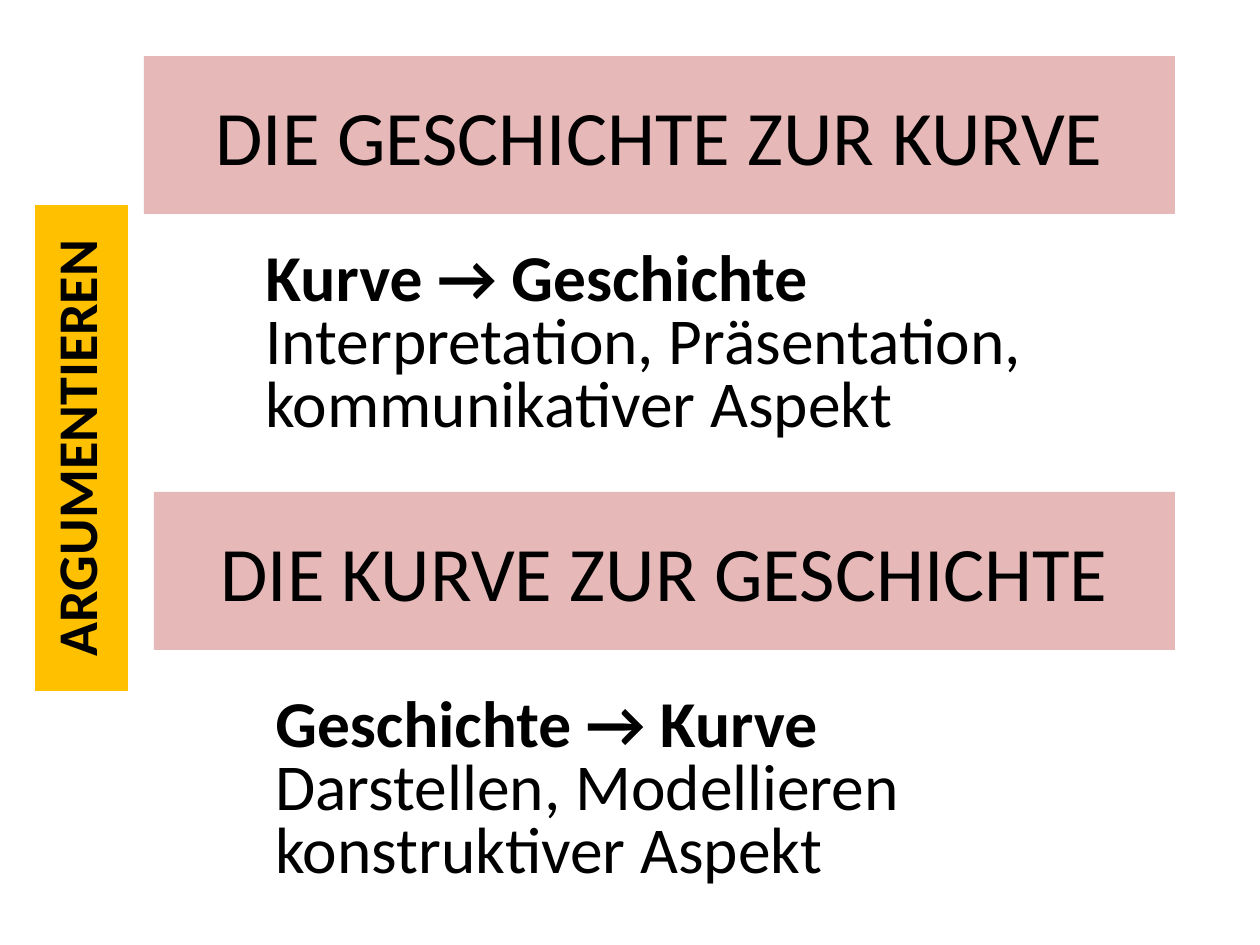
from dataclasses import dataclass

from pptx import Presentation
from pptx.dml.color import RGBColor
from pptx.enum.shapes import MSO_SHAPE
from pptx.enum.text import MSO_ANCHOR, PP_ALIGN
from pptx.oxml.ns import qn
from pptx.slide import Slide
from pptx.text.text import TextFrame
from pptx.util import Emu, Pt

PIXELS_PER_INCH = 126
BLACK = RGBColor(0x00, 0x00, 0x00)
ROSE = RGBColor(0xE6, 0xB9, 0xB8)
AMBER = RGBColor(0xFF, 0xC0, 0x00)
FONT = "Calibri"


@dataclass(frozen=True)
class Area:
    left: int
    top: int
    width: int
    height: int

    def to_emu(self) -> list[Emu]:
        return [px(value) for value in (self.left, self.top, self.width, self.height)]


@dataclass(frozen=True)
class Section:
    title: str
    title_area: Area
    body: str
    body_area: Area


SECTIONS = [
    Section(
        "DIE GESCHICHTE ZUR KURVE",
        Area(144, 56, 1031, 158),
        "Kurve → Geschichte\vInterpretation, Präsentation, kommunikativer Aspekt",
        Area(253, 244, 784, 203),
    ),
    Section(
        "DIE KURVE ZUR GESCHICHTE",
        Area(154, 492, 1021, 158),
        "Geschichte → Kurve\vDarstellen, Modellieren\nkonstruktiver Aspekt",
        Area(263, 690, 784, 203),
    ),
]


def px(value: int) -> Emu:
    return Emu(round(value * 914400 / PIXELS_PER_INCH))


def format_text(frame: TextFrame, size: float, bold: bool = False) -> None:
    for paragraph in frame.paragraphs:
        for span in paragraph.runs:
            span.font.name = FONT
            span.font.size = Pt(size)
            span.font.bold = bold
            span.font.color.rgb = BLACK


def add_banner(page: Slide, text: str, area: Area, fill: RGBColor, size: int,
               bold: bool = False) -> TextFrame:
    banner = page.shapes.add_shape(MSO_SHAPE.RECTANGLE, *area.to_emu())
    banner.shadow.inherit = False
    banner.fill.solid()
    banner.fill.fore_color.rgb = fill
    banner.line.fill.background()
    frame = banner.text_frame
    frame.text = text
    frame.vertical_anchor = MSO_ANCHOR.MIDDLE
    frame.paragraphs[0].alignment = PP_ALIGN.CENTER
    format_text(frame, size, bold)
    return frame


def add_body(page: Slide, text: str, area: Area) -> None:
    frame = page.shapes.add_textbox(*area.to_emu()).text_frame
    frame.word_wrap = True
    frame.vertical_anchor = MSO_ANCHOR.MIDDLE
    frame.text = text
    format_text(frame, 37.4)
    for paragraph in frame.paragraphs:
        paragraph.line_spacing = 0.8
    frame.paragraphs[0].runs[0].font.bold = True


def add_side_label(page: Slide, text: str, area: Area) -> None:
    frame = add_banner(page, text, area, AMBER, 32, bold=True)
    frame.vertical_anchor = MSO_ANCHOR.TOP
    label = page.shapes[-1]
    label.element.find(".//" + qn("a:bodyPr")).set("vert", "vert270")


def main() -> None:
    deck = Presentation()
    deck.slide_width, deck.slide_height = px(1260), px(945)
    page = deck.slides.add_slide(deck.slide_layouts[6])
    for section in SECTIONS:
        add_banner(page, section.title, section.title_area, ROSE, 44)
        add_body(page, section.body, section.body_area)
    add_side_label(page, "ARGUMENTIEREN", Area(35, 205, 93, 486))
    deck.save("out.pptx")


if __name__ == "__main__":
    main()
